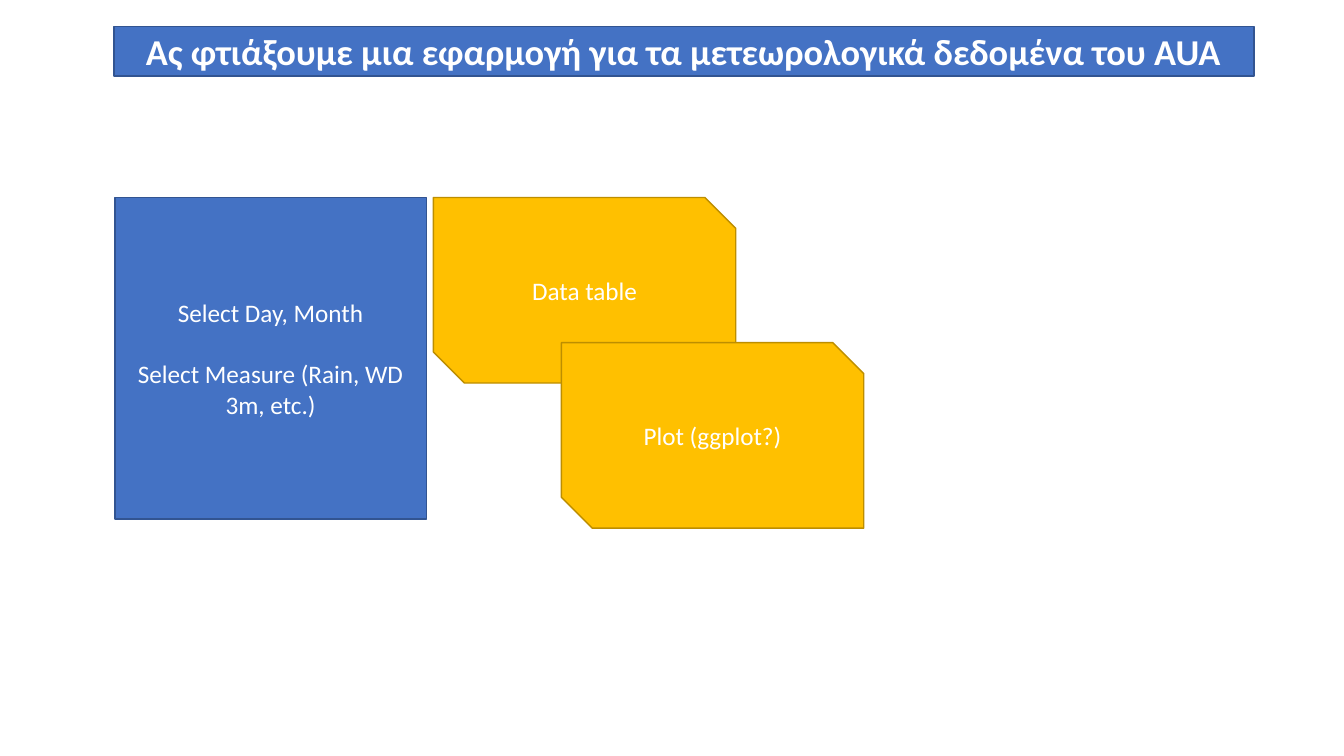
from dataclasses import dataclass

from pptx import Presentation
from pptx.dml.color import RGBColor
from pptx.enum.shapes import MSO_SHAPE
from pptx.enum.text import MSO_ANCHOR, PP_ALIGN
from pptx.slide import Slide
from pptx.util import Pt

COLORS = {
    "blue": "4472C4",
    "blue_edge": "325491",
    "gold": "FFC000",
    "gold_edge": "BD8E00",
    "white": "FFFFFF",
}
FONT = "Calibri"
LINE_GAP = 22
PANEL_TOP = 141.1
OUTPUT_SIZE = (216, 132.5)


@dataclass(frozen=True)
class Panel:
    lines: tuple[str, ...]
    left: float
    top: float
    width: float
    height: float
    color: str = "blue"
    outline: MSO_SHAPE = MSO_SHAPE.RECTANGLE
    size: float = 18
    bold: bool = False


def output_panel(label: str, left: float, top: float) -> Panel:
    return Panel((label,), left, top, *OUTPUT_SIZE, "gold", MSO_SHAPE.SNIP_2_DIAG_RECTANGLE)


PANELS = (
    Panel(
        ("Ας φτιάξουμε μια εφαρμογή για τα μετεωρολογικά δεδομένα του AUA",),
        81.4, 18.9, 814.3, 35.3, size=26, bold=True,
    ),
    Panel(
        ("Select Day, Month", "Select Measure (Rain, WD 3m, etc.)"),
        82, PANEL_TOP, 222.5, 229.7,
    ),
    output_panel("Data table", 309.6, PANEL_TOP),
    output_panel("Plot (ggplot?)", 401, 244.8),
)


def draw_panel(slide: Slide, panel: Panel) -> None:
    body = slide.shapes.add_shape(
        panel.outline, Pt(panel.left), Pt(panel.top), Pt(panel.width), Pt(panel.height)
    )
    body.shadow.inherit = False
    body.fill.solid()
    body.fill.fore_color.rgb = RGBColor.from_string(COLORS[panel.color])
    body.line.color.rgb = RGBColor.from_string(COLORS[f"{panel.color}_edge"])
    body.line.width = Pt(1)

    frame = body.text_frame
    frame.word_wrap = True
    frame.vertical_anchor = MSO_ANCHOR.MIDDLE
    frame.text = "\n".join(panel.lines)
    for index, paragraph in enumerate(frame.paragraphs):
        paragraph.alignment = PP_ALIGN.CENTER
        if index:
            paragraph.space_before = Pt(LINE_GAP)
        for run in paragraph.runs:
            run.font.name = FONT
            run.font.size = Pt(panel.size)
            run.font.bold = panel.bold
            run.font.color.rgb = RGBColor.from_string(COLORS["white"])


def main() -> None:
    presentation = Presentation()
    presentation.slide_width = Pt(960)
    presentation.slide_height = Pt(540)
    slide = presentation.slides.add_slide(presentation.slide_layouts[6])
    for panel in PANELS:
        draw_panel(slide, panel)
    presentation.save("out.pptx")


if __name__ == "__main__":
    main()
